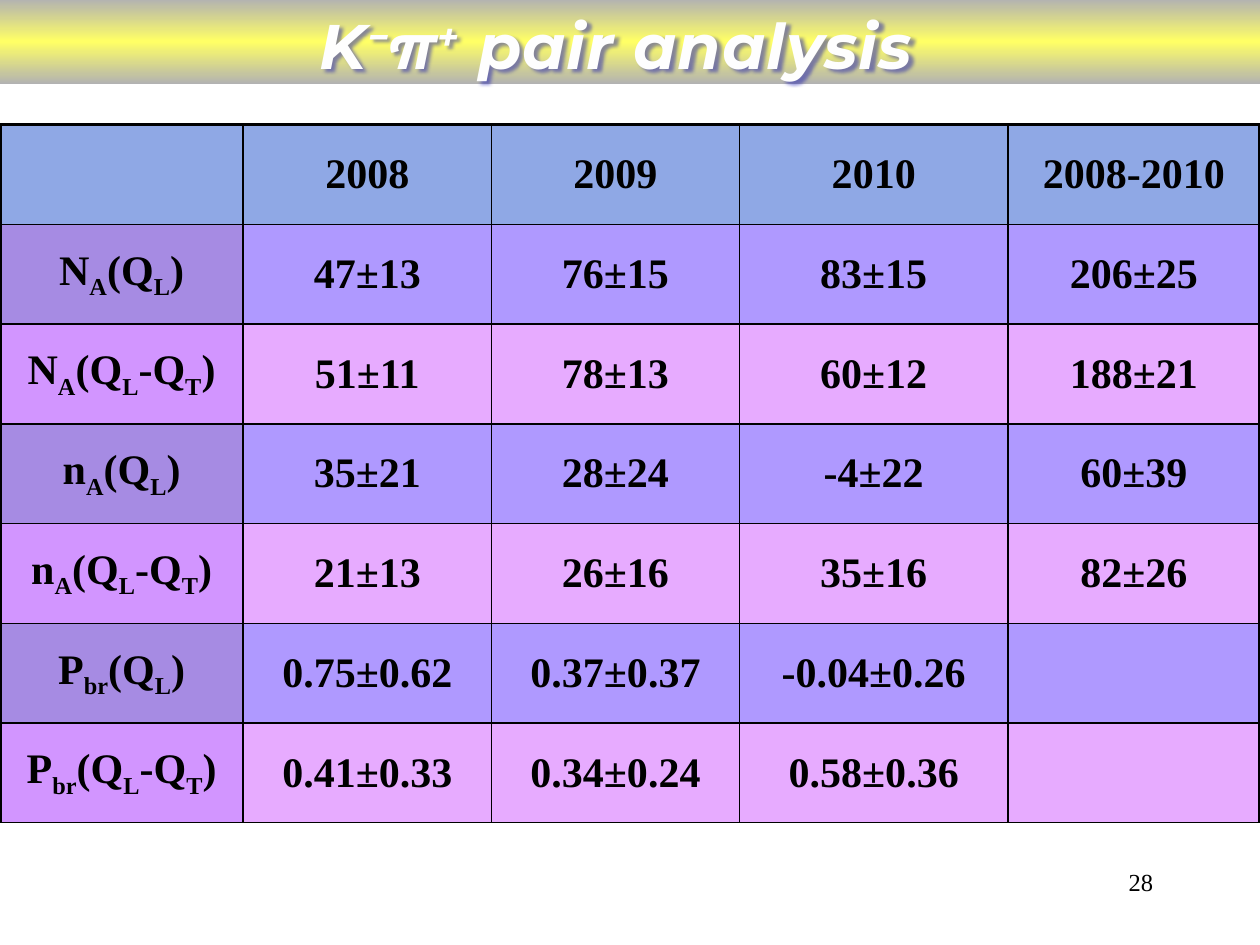
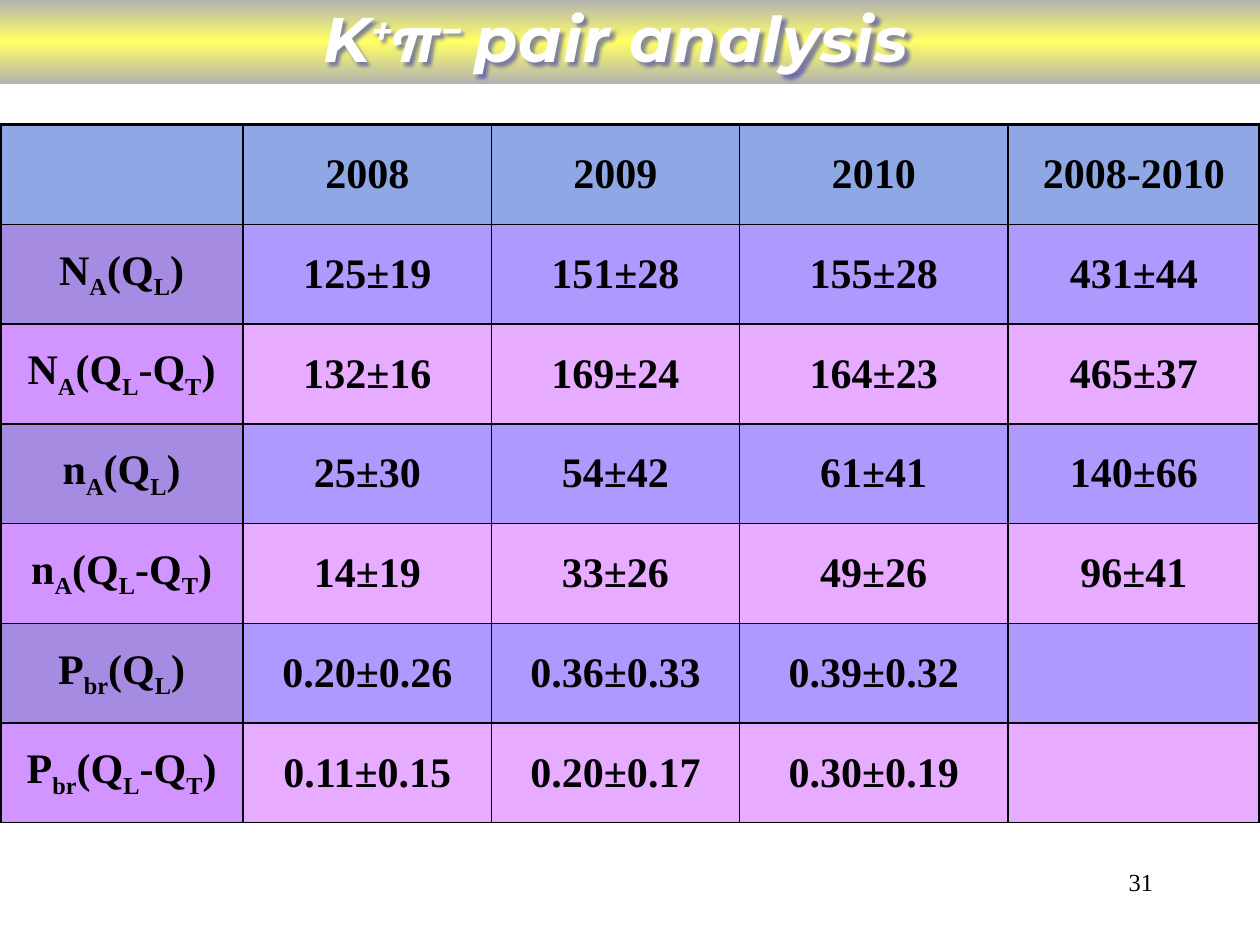
from copy import deepcopy
from itertools import product

from lxml import etree
from pptx import Presentation
from pptx.dml.color import RGBColor
from pptx.enum import shapes, text
from pptx.oxml.ns import qn
from pptx.util import Inches, Pt

COLORS = {
    "black": "000000", "title": "FEFEFE", "outline": "1C1CB5",
    "band_edge": "B2B2B2", "band_middle": "FFFF66", "header": "8FA8E5",
    "label_odd": "A68BE3", "label_even": "D295FF",
    "value_odd": "AF99FF", "value_even": "E7ABFF",
}
TITLE_FONT, BODY_FONT = "Montserrat", "Times New Roman"
COLUMN_WIDTHS = [1.93, 1.97, 1.97, 2.13, 2.0]
TABLE_HEIGHT = 5.54
YEARS = ["", "2008", "2009", "2010", "2008-2010"]
LABELS = [a + b for a, b in product(["N|A|", "n|A|", "P|br|"],
                                    ["(Q|L|)", "(Q|L|-Q|T|)"])]
ANALYSES = [
    {"title": "K|−|π|+| pair analysis", "title_box": (2.39, 0, 5, 0.56),
     "number": "28",
     "values": [["47±13", "76±15", "83±15", "206±25"],
                ["51±11", "78±13", "60±12", "188±21"],
                ["35±21", "28±24", "-4±22", "60±39"],
                ["21±13", "26±16", "35±16", "82±26"],
                ["0.75±0.62", "0.37±0.37", "-0.04±0.26", ""],
                ["0.41±0.33", "0.34±0.24", "0.58±0.36", ""]]},
    {"title": "K|+|π|− |pair analysis", "title_box": (2.39, -0.05, 5, 0.68),
     "number": "31",
     "values": [["125±19", "151±28", "155±28", "431±44"],
                ["132±16", "169±24", "164±23", "465±37"],
                ["25±30", "54±42", "61±41", "140±66"],
                ["14±19", "33±26", "49±26", "96±41"],
                ["0.20±0.26", "0.36±0.33", "0.39±0.32", ""],
                ["0.11±0.15", "0.20±0.17", "0.30±0.19", ""]]},
]


def rgb(name):
    """Return the named colour."""
    return RGBColor.from_string(COLORS[name])


def make_line(tag, color, width):
    """Build a solid line element for a cell border or a text outline."""
    ln = etree.Element(qn(tag), w=str(Pt(width)))
    fill = etree.SubElement(ln, qn("a:solidFill"))
    etree.SubElement(fill, qn("a:srgbClr"), val=COLORS[color])
    return ln


def write(tf, content, font=BODY_FONT, size=24, color="black", bold=False,
          italic=False, align=text.PP_ALIGN.CENTER, shift=0):
    """Write one paragraph, raising or lowering the parts between bars."""
    p = tf.paragraphs[0]
    p.alignment = align
    for i, part in enumerate(content.split("|")):
        if not part:
            continue
        r = p.add_run()
        r.text = part
        r.font.name, r.font.size = font, Pt(size)
        r.font.bold, r.font.italic = bold, italic
        r.font.color.rgb = rgb(color)
        if i % 2:
            r._r.get_or_add_rPr().set("baseline", str(shift * 1000))


def add_text(s, box, content, wrap=True, **style):
    """Add a text box."""
    sp = s.shapes.add_textbox(*map(Inches, box))
    sp.text_frame.word_wrap = wrap
    write(sp.text_frame, content, **style)
    return sp


def add_band(s, box):
    """Add the gradient band behind the title."""
    sp = s.shapes.add_shape(shapes.MSO_SHAPE.RECTANGLE, *map(Inches, box))
    sp.shadow.inherit = False
    sp.line.fill.background()
    sp.fill.gradient()
    sp.fill.gradient_angle = 90
    gs_list = sp._element.spPr.find(".//" + qn("a:gsLst"))
    gs_list.append(deepcopy(gs_list[0]))
    names = ["band_edge", "band_middle", "band_edge"]
    for i, (stop, name) in enumerate(zip(sp.fill.gradient_stops, names)):
        stop.position = i / 2
        stop.color.rgb = rgb(name)


def add_title(s, box, content):
    """Add the outlined title on one line, with a soft shadow."""
    sp = add_text(s, box, content, wrap=False, font=TITLE_FONT, size=36,
                  color="title", bold=True, italic=True, shift=30)
    tf = sp.text_frame
    tf.margin_left = tf.margin_right = 0
    for r in tf.paragraphs[0].runs:
        props = r._r.get_or_add_rPr()
        props.set("spc", "50")
        props.insert(0, make_line("a:ln", "outline", 1))
    effects = etree.SubElement(sp._element.spPr, qn("a:effectLst"))
    shadow = etree.SubElement(effects, qn("a:outerShdw"), blurRad="25400",
                              dist="25400", dir="2700000")
    tint = etree.SubElement(shadow, qn("a:srgbClr"), val=COLORS["outline"])
    etree.SubElement(tint, qn("a:alpha"), val="50000")


def cell_color(row, col):
    """Pick the fill for a table position."""
    if row == 0:
        return "header"
    return ("value" if col else "label") + ("_odd" if row % 2 else "_even")


def add_results(s, left, top, values):
    """Add the table of yearly results."""
    rows = [YEARS] + [[label] + line for label, line in zip(LABELS, values)]
    last = len(YEARS) - 1
    table = s.shapes.add_table(
        len(rows), len(YEARS), Inches(left), Inches(top),
        Inches(sum(COLUMN_WIDTHS)), Inches(TABLE_HEIGHT)).table
    for column, width in zip(table.columns, COLUMN_WIDTHS):
        column.width = Inches(width)
    for i, line in enumerate(rows):
        table.rows[i].height = Inches(TABLE_HEIGHT / len(rows))
        for j, content in enumerate(line):
            cell = table.cell(i, j)
            cell.vertical_anchor = text.MSO_ANCHOR.MIDDLE
            cell.fill.solid()
            cell.fill.fore_color.rgb = rgb(cell_color(i, j))
            write(cell.text_frame, content, bold=True, shift=-25)
            outer = {"L": j == 0, "R": j == last, "T": i == 0, "B": False}
            for k, (side, thick) in enumerate(outer.items()):
                border = make_line("a:ln" + side, "black", 2.25 if thick else 1)
                cell._tc.get_or_add_tcPr().insert(k, border)


def add_analysis(prs, title, title_box, number, values):
    """Add one slide of pair analysis."""
    s = prs.slides.add_slide(prs.slide_layouts[6])
    add_results(s, 0, 0.99, values)
    add_band(s, (0, -0.01, 10, 0.68))
    add_title(s, title_box, title)
    add_text(s, (7.17, 6.83, 2.08, 0.5), number, size=14,
             align=text.PP_ALIGN.RIGHT)


def main():
    """Build and save the presentation."""
    prs = Presentation()
    prs.slide_width, prs.slide_height = Inches(10), Inches(7.5)
    for analysis in ANALYSES:
        add_analysis(prs, **analysis)
    prs.save("out.pptx")


if __name__ == "__main__":
    main()
